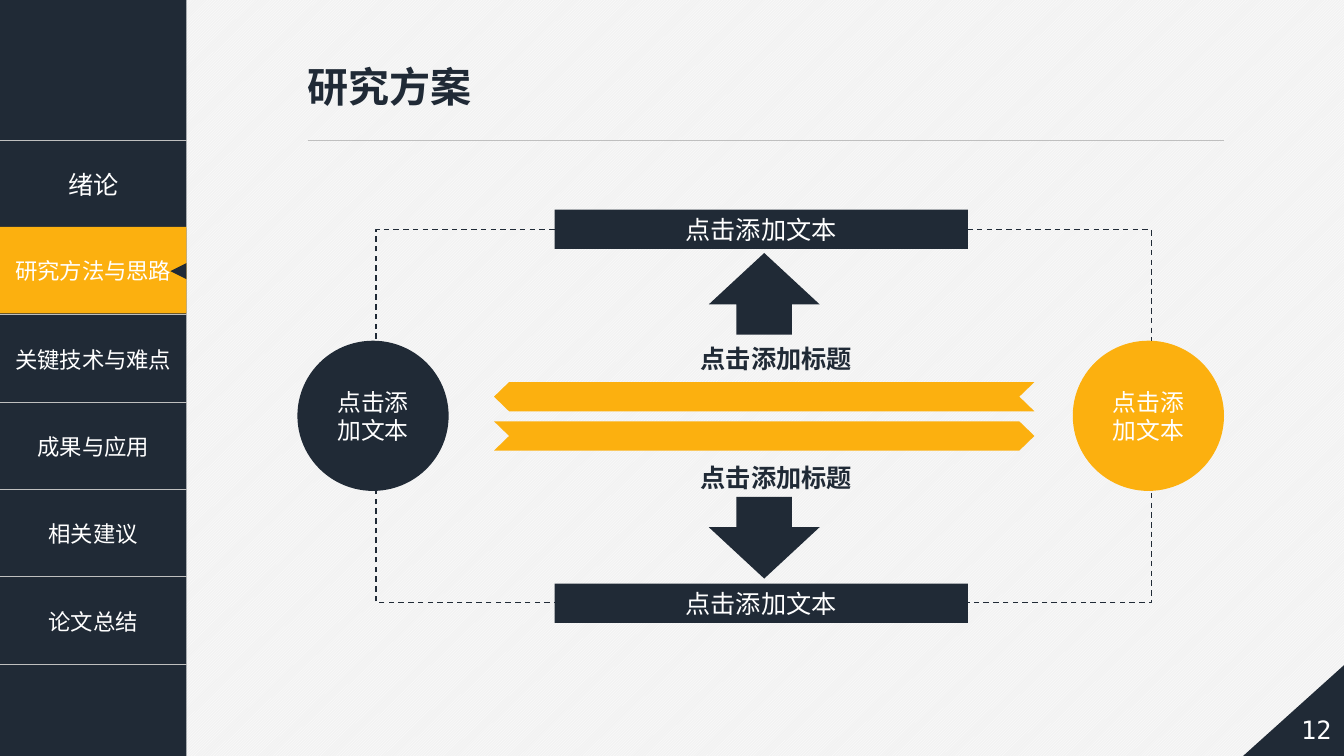
from lxml.etree import SubElement
from pptx import Presentation
from pptx.dml.color import RGBColor
from pptx.enum.dml import MSO_LINE, MSO_PATTERN
from pptx.enum.shapes import MSO_CONNECTOR, MSO_SHAPE as SHAPE
from pptx.enum.text import MSO_ANCHOR as ANCHOR, MSO_AUTO_SIZE as AUTO, PP_ALIGN as ALIGN
from pptx.oxml.ns import qn
from pptx.util import Inches, Pt

COLORS = {"navy": "202A36", "amber": "FCB00F", "rule": "BFBFBF",
          "paper": "F2F2F2", "white": "FFFFFF"}
CJK = "Noto Sans CJK SC"
TIGHT = {"margin_left": Inches(0.08), "margin_right": Inches(0.08),
         "margin_top": Inches(0.04), "margin_bottom": Inches(0.04)}
CENTERED = {**TIGHT, "word_wrap": True, "vertical_anchor": ANCHOR.MIDDLE}
LABEL = {**TIGHT, "word_wrap": False, "auto_size": AUTO.SHAPE_TO_FIT_TEXT}


def color(name):
    return RGBColor.from_string(COLORS[name])


def set_formats(target, formats):
    for name, value in formats.items():
        setattr(target, name, value)


class SlideBuilder:
    def __init__(self, slide):
        self.slide = slide
        self.shapes = slide.shapes

    def background(self):
        fill = self.slide.background.fill
        fill.patterned()
        fill.pattern = MSO_PATTERN.LIGHT_UPWARD_DIAGONAL
        fill.fore_color.rgb = color("white")
        fill.back_color.rgb = color("paper")

    def add_text(self, frame, text, size, ink="white", align=ALIGN.CENTER,
                 latin=CJK, bold=False):
        paragraph = frame.paragraphs[0]
        paragraph.alignment = align
        run = paragraph.add_run()
        run.text = text
        set_formats(run.font, {"name": latin, "size": Pt(size), "bold": bold})
        run.font.color.rgb = color(ink)
        SubElement(run.font._element, qn("a:ea"), typeface=CJK)

    def title(self, text, box):
        title = self.shapes.title
        set_formats(title, dict(zip(("left", "top", "width", "height"), map(Inches, box))))
        set_formats(title.text_frame, {"word_wrap": False, "auto_size": AUTO.NONE,
                                       "vertical_anchor": ANCHOR.MIDDLE})
        self.add_text(title.text_frame, text, 29.3, "navy", ALIGN.LEFT, "Arial", True)

    def paint(self, shape, fill):
        shape.shadow.inherit = False
        shape.line.fill.background()
        if fill:
            shape.fill.solid()
            shape.fill.fore_color.rgb = color(fill)
        else:
            shape.fill.background()
        return shape

    def shape(self, kind, box, fill, text=None, size=18, frame=CENTERED):
        shape = self.paint(self.shapes.add_shape(kind, *map(Inches, box)), fill)
        if text:
            set_formats(shape.text_frame, frame)
            self.add_text(shape.text_frame, text, size)
        return shape

    def label(self, text, box, frame=LABEL, **style):
        label = self.shapes.add_textbox(*map(Inches, box))
        set_formats(label.text_frame, frame)
        self.add_text(label.text_frame, text, 18, **style)

    def outline(self, points, fill):
        start, *rest = [tuple(map(Inches, point)) for point in points]
        builder = self.shapes.build_freeform(*start)
        builder.add_line_segments(rest, close=True)
        self.paint(builder.convert_to_shape(), fill)

    def rule(self, x1, x2, y):
        rule = self.shapes.add_connector(MSO_CONNECTOR.STRAIGHT,
                                         *map(Inches, (x1, y, x2, y)))
        rule.line.width = Pt(0.5)
        rule.line.color.rgb = color("rule")
        SubElement(rule._element.spPr, qn("a:effectLst"))

    def menu(self, entries, box):
        """One-column table with rules above and below each entry."""
        frame = self.shapes.add_table(len(entries), 1, *map(Inches, box))
        table = frame.table
        set_formats(table, {"first_row": False, "horz_banding": False})
        for index, (entry, size) in enumerate(entries):
            cell = table.cell(index, 0)
            cell.vertical_anchor = ANCHOR.MIDDLE
            self.add_text(cell.text_frame, entry, size)
            self.cell_borders(cell)
            cell.fill.background()

    def cell_borders(self, cell):
        properties = cell._tc.get_or_add_tcPr()
        for side in "LRTB":
            line = SubElement(properties, qn(f"a:ln{side}"), w=str(Pt(1)))
            if side in "LR":
                SubElement(line, qn("a:noFill"))
            else:
                fill = SubElement(line, qn("a:solidFill"))
                SubElement(fill, qn("a:srgbClr"), val=COLORS["rule"])


def main():
    deck = Presentation()
    deck.slide_width, deck.slide_height = Inches(13.33), Inches(7.5)
    page = SlideBuilder(deck.slides.add_slide(deck.slide_layouts[5]))
    page.background()

    # Sidebar with the current chapter highlighted
    page.shape(SHAPE.RECTANGLE, (0, 0, 1.85, 7.5), "navy")
    chapters = ["绪论", "研究方法与思路", "关键技术与难点", "成果与应用", "相关建议", "论文总结"]
    page.menu([(name, 16 if index else 18) for index, name in enumerate(chapters)],
              (0, 1.39, 1.85, 5.2))
    page.shape(SHAPE.RECTANGLE, (0, 2.25, 1.85, 0.86), "amber", chapters[1], 16)
    marker = page.shape(SHAPE.ISOSCELES_TRIANGLE, (1.69, 2.61, 0.16, 0.16), "navy")
    marker.rotation = 270

    # Heading and page corner
    page.title("研究方案", (2.95, 0.56, 1.85, 0.59))
    page.rule(3.05, 12.14, 1.39)
    corner = page.shape(SHAPE.RIGHT_TRIANGLE, (12.33, 6.6, 1, 0.9), "navy")
    corner._element.spPr.xfrm.set("flipH", "1")
    page.label("12", (12.78, 6.97, 0.55, 0.53), CENTERED, latin="DejaVu Sans Mono")

    # Dashed loop linking both circles and both bars
    loop = page.shape(SHAPE.RECTANGLE, (3.73, 2.28, 7.69, 3.7), None)
    loop.line.color.rgb = color("navy")
    set_formats(loop.line, {"width": Pt(1), "dash_style": MSO_LINE.DASH})
    for left, fill in ((2.95, "navy"), (10.64, "amber")):
        page.shape(SHAPE.OVAL, (left, 3.38, 1.5, 1.49), fill, "点击添加文本", 17)

    halves = ((2.08, SHAPE.UP_ARROW, 2.51, 3.37), (5.79, SHAPE.DOWN_ARROW, 4.93, 4.55))
    for bar_top, arrow_kind, arrow_top, label_top in halves:
        page.shape(SHAPE.RECTANGLE, (5.5, bar_top, 4.1, 0.39), "navy", "点击添加文本")
        arrow = page.shape(arrow_kind, (7.03, arrow_top, 1.1, 0.81), "navy")
        arrow.adjustments[0], arrow.adjustments[1] = 0.5, 0.63
        page.label("点击添加标题", (6.87, label_top, 1.68, 0.39),
                   ink="navy", align=ALIGN.LEFT, bold=True)

    # Opposed ribbons, each notched at its tail
    notch, height = 0.15, 0.29
    for tail, tip, top in ((10.26, 4.9, 3.79), (4.9, 10.26, 4.18)):
        step = notch if tip > tail else -notch
        middle, bottom = top + height / 2, top + height
        page.outline([(tail, top), (tip - step, top), (tip, middle),
                      (tip - step, bottom), (tail, bottom), (tail + step, middle)],
                     "amber")

    deck.save("out.pptx")


if __name__ == "__main__":
    main()
